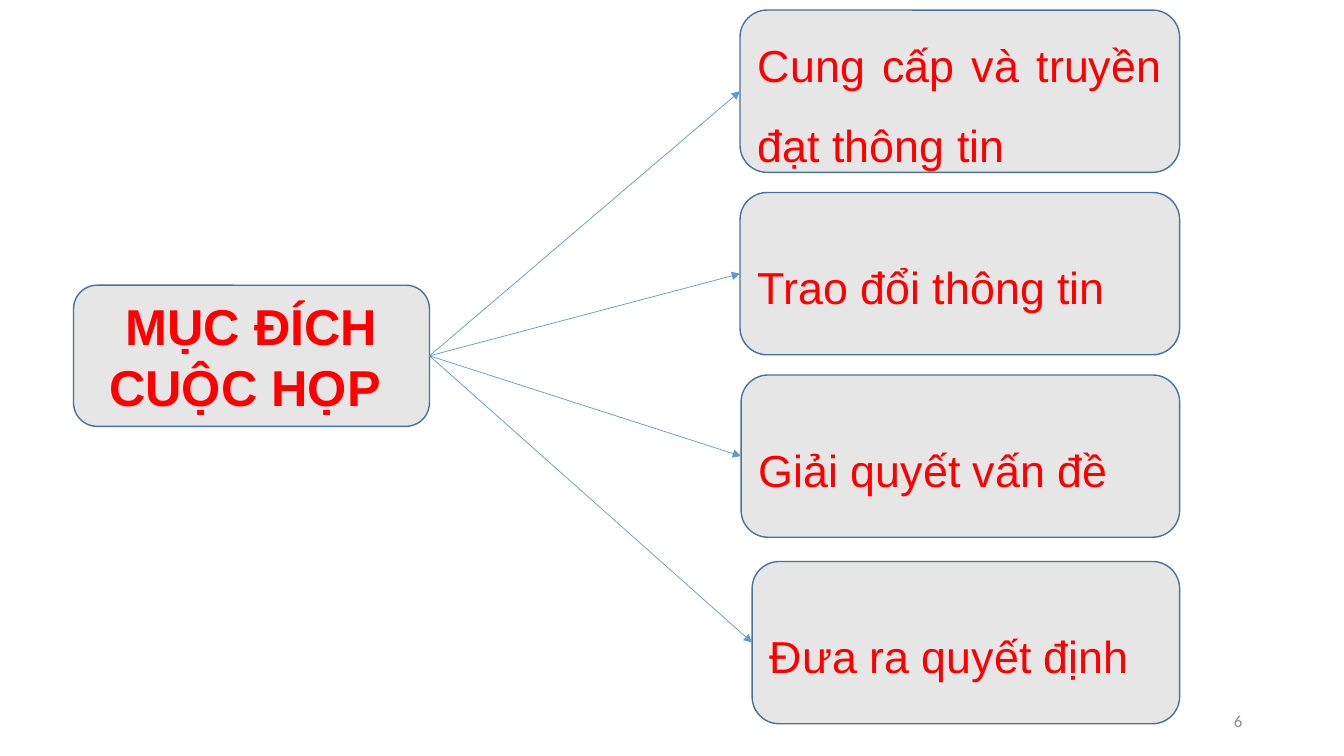
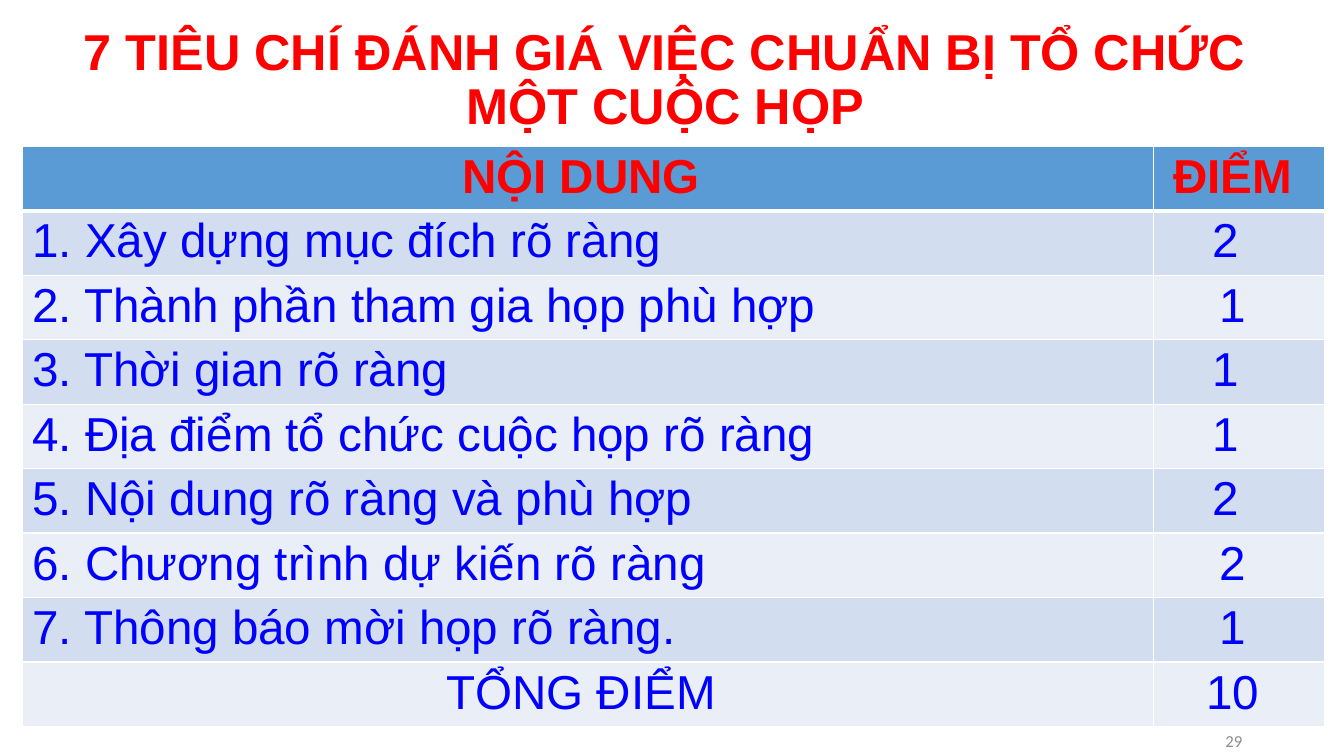
from lxml.etree import SubElement
from pptx import Presentation
from pptx.dml.color import RGBColor
from pptx.enum.shapes import MSO_CONNECTOR, MSO_SHAPE
from pptx.enum.text import MSO_ANCHOR, PP_ALIGN
from pptx.oxml.ns import qn
from pptx.util import Inches, Pt

COLORS = {
    "red": "FF0000", "blue": "0000FF", "number": "8C8C8C", "box": "E7E6E6",
    "outline": "43739E", "accent": "5B9BD5", "band_dark": "D2DEEF",
    "band_light": "EAEFF7", "white": "FFFFFF",
}

TOPIC = "MỤC ĐÍCH CUỘC HỌP "
PURPOSES = [
    ("Cung cấp và truyền đạt thông tin", 7.34, 0.1),
    ("Trao đổi thông tin", 7.34, 1.91),
    ("Giải quyết vấn đề", 7.35, 3.72),
    ("Đưa ra quyết định", 7.46, 5.57),
]
PURPOSE_RIGHT, PURPOSE_HEIGHT = 11.7, 1.61

TITLE = "7 TIÊU CHÍ ĐÁNH GIÁ VIỆC CHUẨN BỊ TỔ CHỨC \nMỘT CUỘC HỌP "
CRITERIA = [
    ("NỘI DUNG ", "ĐIỂM", 0.23),
    ("1. Xây dựng mục đích rõ ràng", "2", 0.36),
    ("2. Thành phần tham gia họp phù hợp", "1", 0.23),
    ("3. Thời gian rõ ràng", "1", 0.36),
    ("4. Địa điểm tổ chức cuộc họp rõ ràng", "1", 0.36),
    ("5. Nội dung rõ ràng và phù hợp", "2", 0.36),
    ("6. Chương trình dự kiến rõ ràng", "2", 0.23),
    ("7. Thông báo mời họp rõ ràng.", "1", 0.23),
    ("TỔNG ĐIỂM ", "10", 0.23),
]
COLUMN_WIDTHS = [11.22, 1.7]
ROW_HEIGHT = 0.64


def color(name):
    return RGBColor.from_string(COLORS[name])


def write(frame, text, size, ink="red", font="Arial", bold=False,
          align=PP_ALIGN.CENTER, spacing=None):
    para = frame.paragraphs[0]
    para.text = text
    para.alignment = align
    if spacing:
        para.line_spacing = spacing
    for span in para.runs:
        span.font.name = font
        span.font.size = Pt(size)
        span.font.bold = bold
        span.font.color.rgb = color(ink)


def add_text(page, place, text, size, **style):
    box = page.shapes.add_textbox(*map(Inches, place))
    box.text_frame.word_wrap = True
    box.text_frame.vertical_anchor = MSO_ANCHOR.MIDDLE
    write(box.text_frame, text, size, **style)


def add_page(deck):
    return deck.slides.add_slide(deck.slide_layouts[6])


def add_number(page, number, top=6.95, height=0.4):
    add_text(page, (9.42, top, 3, height), number, 12, ink="number",
             font="Calibri", align=PP_ALIGN.RIGHT)


def add_box(page, kind, place, text, size, **style):
    box = page.shapes.add_shape(kind, *map(Inches, place))
    box.shadow.inherit = False
    box.fill.solid()
    box.fill.fore_color.rgb = color("box")
    box.line.color.rgb = color("outline")
    box.line.width = Pt(1)
    box.text_frame.word_wrap = True
    box.text_frame.vertical_anchor = MSO_ANCHOR.MIDDLE
    write(box.text_frame, text, size, **style)
    return box


def add_arrow(page, source, target):
    arrow = page.shapes.add_connector(MSO_CONNECTOR.STRAIGHT, 0, 0, 0, 0)
    arrow.begin_connect(source, 3)
    arrow.end_connect(target, 1)
    arrow.line.color.rgb = color("accent")
    arrow.line.width = Pt(0.5)
    SubElement(arrow.line._get_or_add_ln(), qn("a:tailEnd"), type="triangle")
    SubElement(arrow._element.spPr, qn("a:effectLst"))


def set_borders(cell, bottom):
    properties = cell._tc.get_or_add_tcPr()
    for side, width in (("L", 1), ("R", 1), ("T", 1), ("B", bottom)):
        border = SubElement(properties, qn(f"a:ln{side}"), w=str(Pt(width)))
        fill = SubElement(border, qn("a:solidFill"))
        SubElement(fill, qn("a:srgbClr"), val=COLORS["white"])


def build_purposes(deck):
    page = add_page(deck)
    topic = add_box(page, MSO_SHAPE.ROUNDED_RECTANGLE, (0.73, 2.83, 3.53, 1.4),
                    TOPIC, 36, bold=True)
    for text, left, top in PURPOSES:
        place = (left, top, PURPOSE_RIGHT - left, PURPOSE_HEIGHT)
        purpose = add_box(page, MSO_SHAPE.FLOWCHART_ALTERNATE_PROCESS, place,
                          text, 32, align=PP_ALIGN.JUSTIFY, spacing=1.5)
        add_arrow(page, topic, purpose)
    add_number(page, "6")


def build_criteria(deck):
    page = add_page(deck)
    add_text(page, (0, 0.17, 13.33, 1.27), TITLE, 36, bold=True, spacing=0.9)
    last = len(CRITERIA) - 1
    place = (0.22, 1.45, sum(COLUMN_WIDTHS), ROW_HEIGHT * len(CRITERIA))
    table = page.shapes.add_table(len(CRITERIA), len(COLUMN_WIDTHS),
                                  *map(Inches, place)).table
    for column, width in zip(table.columns, COLUMN_WIDTHS):
        column.width = Inches(width)
    for row, (content, score, inset) in enumerate(CRITERIA):
        table.rows[row].height = Inches(ROW_HEIGHT)
        header = row == 0
        band = "accent" if header else "band_dark" if row % 2 else "band_light"
        for index, text in enumerate((content, score)):
            cell = table.cell(row, index)
            centred = index == 1 or row in (0, last)
            set_borders(cell, 3 if header else 1)
            cell.fill.solid()
            cell.fill.fore_color.rgb = color(band)
            cell.margin_top = Inches(0.04)
            cell.margin_bottom = Inches(0.02)
            write(cell.text_frame, text, 34, ink="red" if header else "blue",
                  bold=header,
                  align=PP_ALIGN.CENTER if centred else PP_ALIGN.LEFT)
        table.cell(row, 1).margin_right = Inches(inset)
    add_number(page, "29", top=7.2, height=0.3)


def main():
    deck = Presentation()
    deck.slide_width = Inches(13.33)
    deck.slide_height = Inches(7.5)
    build_purposes(deck)
    build_criteria(deck)
    deck.save("out.pptx")


if __name__ == "__main__":
    main()
